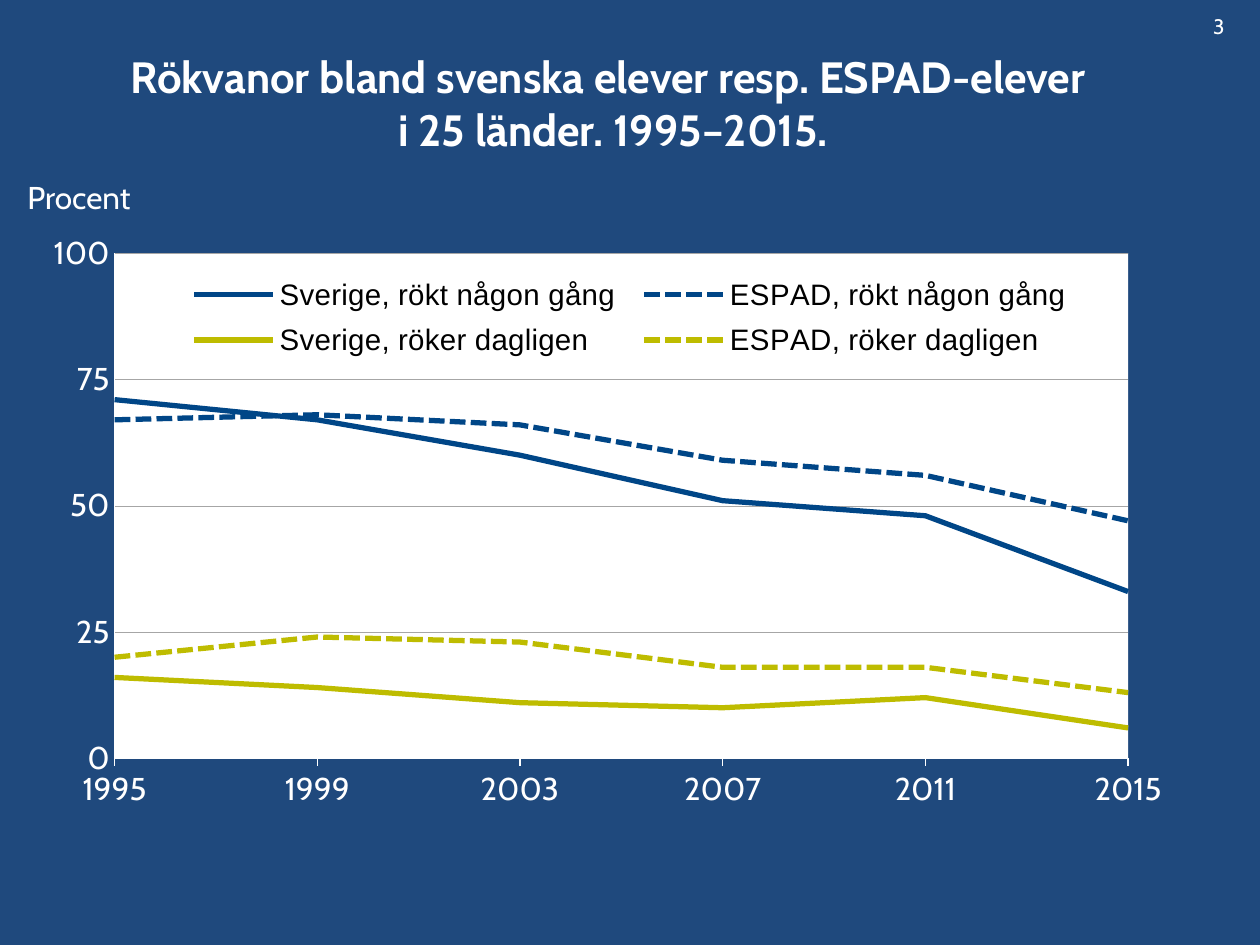
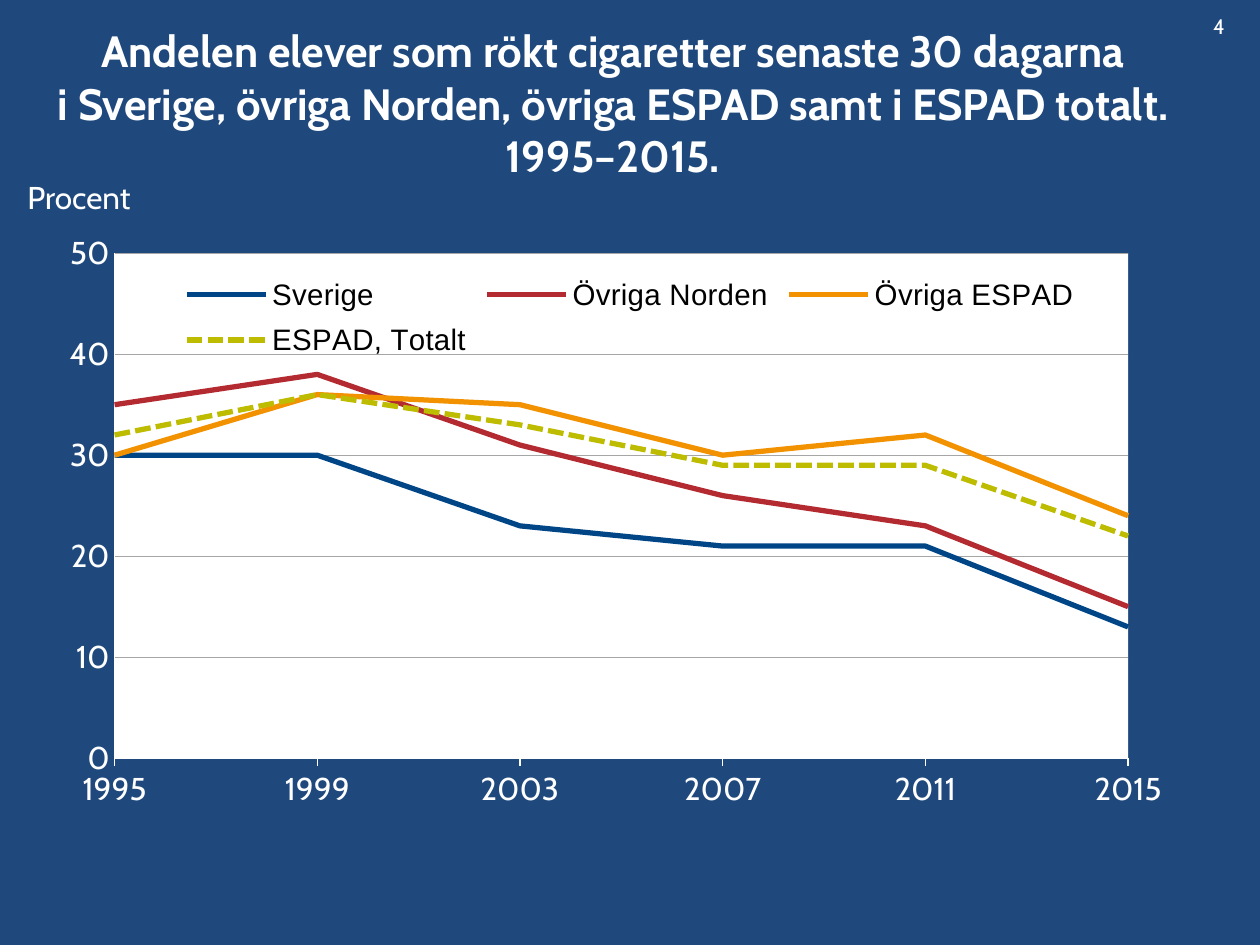
from lxml import etree
from pptx import Presentation
from pptx import util as u
from pptx.chart.data import CategoryChartData
from pptx.dml.color import RGBColor
from pptx.enum import chart as ch, dml, text
from pptx.oxml import parse_xml
from pptx.oxml.ns import nsdecls, qn

NAVY = RGBColor(0x1F, 0x49, 0x7D)
WHITE = RGBColor(0xFF, 0xFF, 0xFF)
BLACK = RGBColor(0, 0, 0)
GREY = RGBColor(0xA6, 0xA6, 0xA6)
BLUE = RGBColor(0x00, 0x46, 0x87)
LIME = RGBColor(0xBE, 0xBC, 0x00)
RED = RGBColor(0xB3, 0x2B, 0x31)
AMBER = RGBColor(0xF2, 0x92, 0x00)

FONT = "Cabin"
WIDE, HIGH = 10, 7.5
YEARS = ["1995", "1999", "2003", "2007", "2011", "2015"]

# Boxes on the slide, in inches; parts of the chart, as shares of it
TITLE = (0.23, 0.3, 9.27, 1.03)
CHART = (0.39, 1.56, 8.83, 5.05)
UNIT = (0.12, 1.36, 1.17, 0.4)
PAGE = (9.53, 0.06, 0.47, 0.3)
PLOT = (0.059, 0.089, 0.914, 0.794)
KEY = (0.114, 0.11, 0.82, 0.16)

# Each slide: page, title, axis top, axis step, series (name, values, colour, dashed)
SLIDES = [
    ("3", "Rökvanor bland svenska elever resp. ESPAD-elever \vi 25 länder. 1995–2015.",
     100, 25, [
         ("Sverige, rökt någon gång", (71, 67, 60, 51, 48, 33), BLUE, False),
         ("ESPAD, rökt någon gång", (67, 68, 66, 59, 56, 47), BLUE, True),
         ("Sverige, röker dagligen", (16, 14, 11, 10, 12, 6), LIME, False),
         ("ESPAD, röker dagligen", (20, 24, 23, 18, 18, 13), LIME, True),
     ]),
    ("4", "Andelen elever som rökt cigaretter senaste 30 dagarna\v"
     "i Sverige, övriga Norden, övriga ESPAD samt i ESPAD totalt. 1995–2015.",
     50, 10, [
         ("Sverige", (30, 30, 23, 21, 21, 13), BLUE, False),
         ("Övriga Norden", (35, 38, 31, 26, 23, 15), RED, False),
         ("Övriga ESPAD", (30, 36, 35, 30, 32, 24), AMBER, False),
         ("ESPAD, Totalt", (32, 36, 33, 29, 29, 22), LIME, True),
     ]),
]


def inch(box):
    return [u.Inches(n) for n in box]


def style(font, size, color=WHITE, name=FONT, bold=False):
    font.size, font.name, font.bold = u.Pt(size), name, bold
    font.color.rgb = color


def stroke(line, color, width):
    line.color.rgb = color
    line.width = u.Pt(width)


def write(shape, words, size, bold=False, align=None, anchor=text.MSO_ANCHOR.TOP):
    frame = shape.text_frame
    frame.word_wrap = True
    frame.auto_size = text.MSO_AUTO_SIZE.NONE
    frame.vertical_anchor = anchor
    frame.text = words
    for par in frame.paragraphs:
        par.alignment = align
        for run in par.runs:
            style(run.font, size, bold=bold)


def label(slide, box, words, size, **form):
    write(slide.shapes.add_textbox(*inch(box)), words, size, **form)


def layout(box, inner=False):
    """Manual layout for a part of a chart."""
    node = parse_xml(f"<c:layout {nsdecls('c')}><c:manualLayout/></c:layout>")
    marks = [("layoutTarget", "inner")] if inner else []
    marks += [("xMode", "edge"), ("yMode", "edge"), *zip("xywh", box)]
    for tag, val in marks:
        etree.SubElement(node[0], qn("c:" + tag)).set("val", str(val))
    return node


def drop(parent, tag):
    for old in parent.findall(qn(tag)):
        parent.remove(old)


def set_plot(chart):
    """Place the white plot area and start the lines on the value axis."""
    area = chart._chartSpace.chart.plotArea
    drop(area, "c:layout")
    area.insert(0, layout(PLOT, inner=True))
    drop(area, "c:spPr")
    area.append(parse_xml(
        f"<c:spPr {nsdecls('c', 'a')}><a:solidFill>"
        f'<a:srgbClr val="{WHITE}"/></a:solidFill></c:spPr>'))
    axis = area.find(qn("c:valAx"))
    drop(axis, "c:crossBetween")
    axis.find(qn("c:crosses")).addnext(
        parse_xml(f'<c:crossBetween {nsdecls("c")} val="midCat"/>'))


def set_key(chart):
    chart.has_legend = True
    key = chart.legend
    key.position = ch.XL_LEGEND_POSITION.RIGHT
    key.include_in_layout = True
    style(key.font, 16.9, BLACK, "Arial")
    drop(key._element, "c:layout")
    key._element.find(qn("c:legendPos")).addnext(layout(KEY))


def set_axes(chart, top, step):
    for axis, tick, width in ((chart.category_axis, ch.XL_TICK_MARK.OUTSIDE, 0.75),
                              (chart.value_axis, ch.XL_TICK_MARK.NONE, 0.23)):
        axis.major_tick_mark = tick
        axis.minor_tick_mark = ch.XL_TICK_MARK.NONE
        style(axis.tick_labels.font, 18)
        stroke(axis.format.line, WHITE, width)
    axis = chart.value_axis
    axis.minimum_scale, axis.maximum_scale, axis.major_unit = 0, top, step
    axis.tick_labels.number_format = "0"
    axis.tick_labels.number_format_is_linked = False
    axis.has_major_gridlines = True
    stroke(axis.major_gridlines.format.line, GREY, 0.23)


def plot(slide, top, step, rows):
    data = CategoryChartData()
    data.categories = YEARS
    for name, vals, *_ in rows:
        data.add_series(name, vals)
    chart = slide.shapes.add_chart(ch.XL_CHART_TYPE.LINE, *inch(CHART), data).chart
    chart.has_title = False
    style(chart.font, 16.9, name="Times New Roman", bold=True)
    set_axes(chart, top, step)
    set_key(chart)
    set_plot(chart)
    chart.plots[0].vary_by_categories = False
    for line, (_, _, color, dashed) in zip(chart.plots[0].series, rows):
        line.smooth = False
        line.marker.style = ch.XL_MARKER_STYLE.NONE
        stroke(line.format.line, color, 3)
        if dashed:
            line.format.line.dash_style = dml.MSO_LINE.SQUARE_DOT


def main():
    prs = Presentation()
    prs.slide_width, prs.slide_height = u.Inches(WIDE), u.Inches(HIGH)

    # Shared background and title place
    back = prs.slide_master.background.fill
    back.solid()
    back.fore_color.rgb = NAVY
    base = prs.slide_layouts[5]
    head = base.placeholders[0]
    head.left, head.top, head.width, head.height = inch(TITLE)

    for page, title, top, step, rows in SLIDES:
        slide = prs.slides.add_slide(base)
        write(slide.shapes.title, title, 25, bold=True,
              align=text.PP_ALIGN.CENTER, anchor=text.MSO_ANCHOR.MIDDLE)
        plot(slide, top, step, rows)
        label(slide, UNIT, "Procent", 18, anchor=text.MSO_ANCHOR.MIDDLE)
        label(slide, PAGE, page, 12)

    prs.save("out.pptx")


if __name__ == "__main__":
    main()
